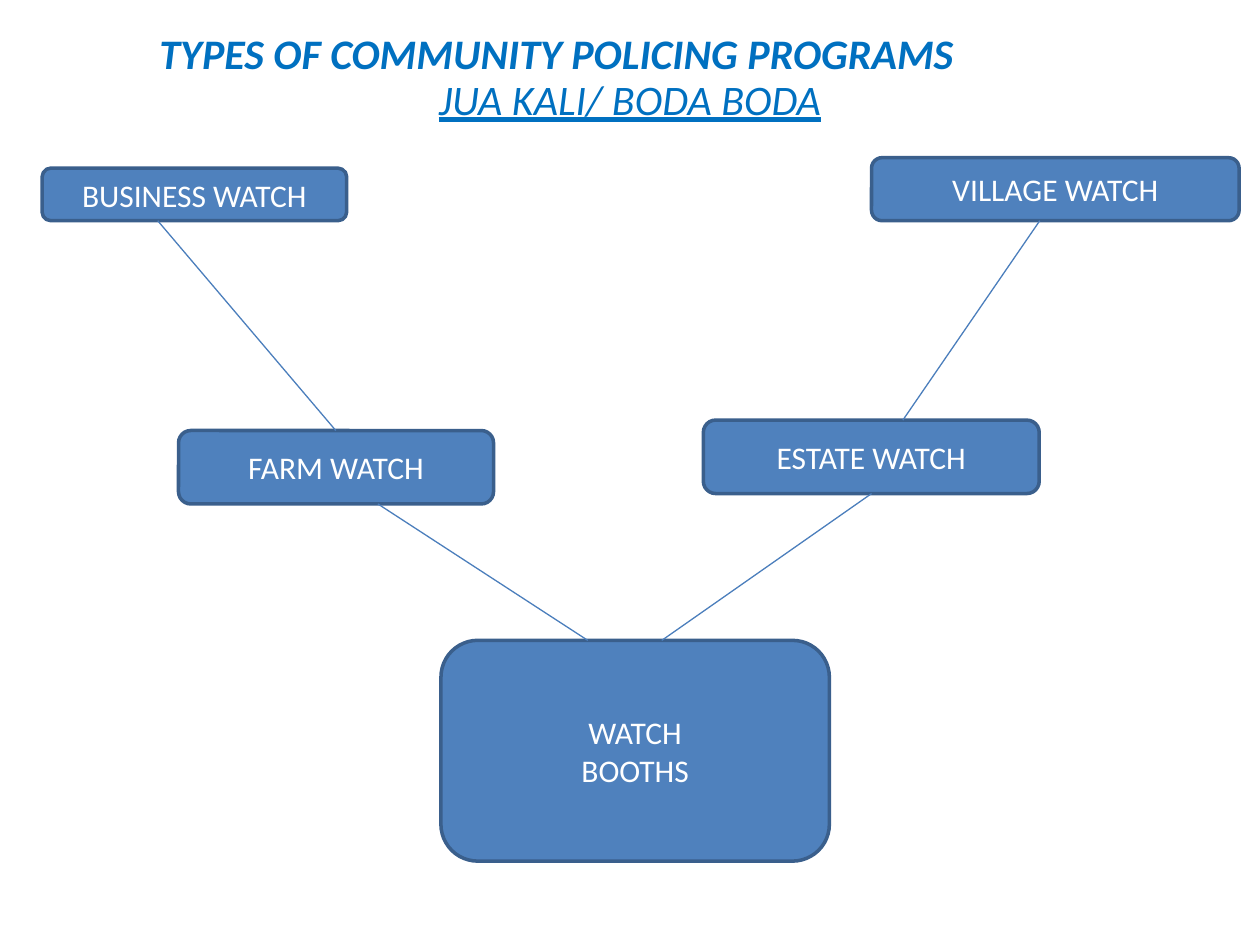
from dataclasses import dataclass

from lxml.etree import SubElement
from pptx import Presentation
from pptx.dml.color import RGBColor
from pptx.enum.shapes import MSO_CONNECTOR, MSO_SHAPE
from pptx.enum.text import MSO_ANCHOR, MSO_AUTO_SIZE, PP_ALIGN
from pptx.oxml.ns import qn
from pptx.util import Cm, Pt


@dataclass(frozen=True)
class Theme:
    font: str = "Calibri"
    heading: RGBColor = RGBColor(0x00, 0x70, 0xC0)
    box_fill: RGBColor = RGBColor(0x4F, 0x81, 0xBD)
    box_line: RGBColor = RGBColor(0x3A, 0x5F, 0x8C)
    box_text: RGBColor = RGBColor(0xFF, 0xFF, 0xFF)
    link: RGBColor = RGBColor(0x4B, 0x7E, 0xBC)
    heading_size: Pt = Pt(24)
    box_size: Pt = Pt(18)
    box_border: Pt = Pt(2)
    link_width: Pt = Pt(0.75)


THEME = Theme()

# Label, then left, top, width, height in cm
PROGRAMS = [
    ("BUSINESS WATCH", (0.85, 3.39, 6.14, 1.06)),
    ("VILLAGE WATCH", (17.57, 3.18, 7.41, 1.27)),
    ("FARM WATCH", (3.6, 8.68, 6.35, 1.48)),
    ("ESTATE WATCH", (14.18, 8.47, 6.77, 1.48)),
    ("WATCH\nBOOTHS", (8.89, 12.91, 7.83, 4.45)),
]

# Start and end of each link in cm
LINKS = [
    ((3.18, 4.45), (6.77, 8.68)),    # business to farm
    ((20.96, 4.45), (18.2, 8.47)),   # village to estate
    ((7.62, 10.16), (11.85, 12.91)),  # farm to booths
    ((17.57, 9.95), (13.34, 12.91)),  # estate to booths
]


def set_text(frame, text, size, color, align, **emphasis):
    frame.text = text
    for paragraph in frame.paragraphs:
        paragraph.alignment = align
        paragraph.space_before = Pt(0)
        for run in paragraph.runs:
            run.font.name = THEME.font
            run.font.size = size
            run.font.color.rgb = color
            for style, value in emphasis.items():
                setattr(run.font, style, value)


def set_heading(placeholder, text, bounds, align, **emphasis):
    placeholder.left, placeholder.top, placeholder.width, placeholder.height = map(Cm, bounds)
    frame = placeholder.text_frame
    frame.word_wrap = True
    frame.auto_size = MSO_AUTO_SIZE.NONE
    frame.vertical_anchor = MSO_ANCHOR.TOP
    set_text(frame, text, THEME.heading_size, THEME.heading, align, italic=True, **emphasis)


def add_program(slide, label, bounds):
    program = slide.shapes.add_shape(MSO_SHAPE.ROUNDED_RECTANGLE, *map(Cm, bounds))
    program.shadow.inherit = False
    program.fill.solid()
    program.fill.fore_color.rgb = THEME.box_fill
    program.line.color.rgb = THEME.box_line
    program.line.width = THEME.box_border
    program.text_frame.vertical_anchor = MSO_ANCHOR.MIDDLE
    set_text(program.text_frame, label, THEME.box_size, THEME.box_text, PP_ALIGN.CENTER)


def add_link(slide, start, end):
    link = slide.shapes.add_connector(MSO_CONNECTOR.STRAIGHT, *map(Cm, start + end))
    link.line.color.rgb = THEME.link
    link.line.width = THEME.link_width
    SubElement(link.element.spPr, qn("a:effectLst"))


def main():
    deck = Presentation()
    deck.slide_width, deck.slide_height = Cm(25.4), Cm(19.05)
    slide = deck.slides.add_slide(deck.slide_layouts[0])

    # Title and subtitle
    set_heading(slide.shapes.title, "TYPES OF COMMUNITY POLICING PROGRAMS",
                (2.96, 0.42, 20.53, 1.27), PP_ALIGN.LEFT, bold=True)
    set_heading(slide.placeholders[1], "JUA KALI/ BODA BODA",
                (0, 1.35, 25.4, 1.27), PP_ALIGN.CENTER, underline=True)

    # Watch programs
    for label, bounds in PROGRAMS:
        add_program(slide, label, bounds)

    # Links between the programs
    for start, end in LINKS:
        add_link(slide, start, end)

    deck.save("out.pptx")


if __name__ == "__main__":
    main()
